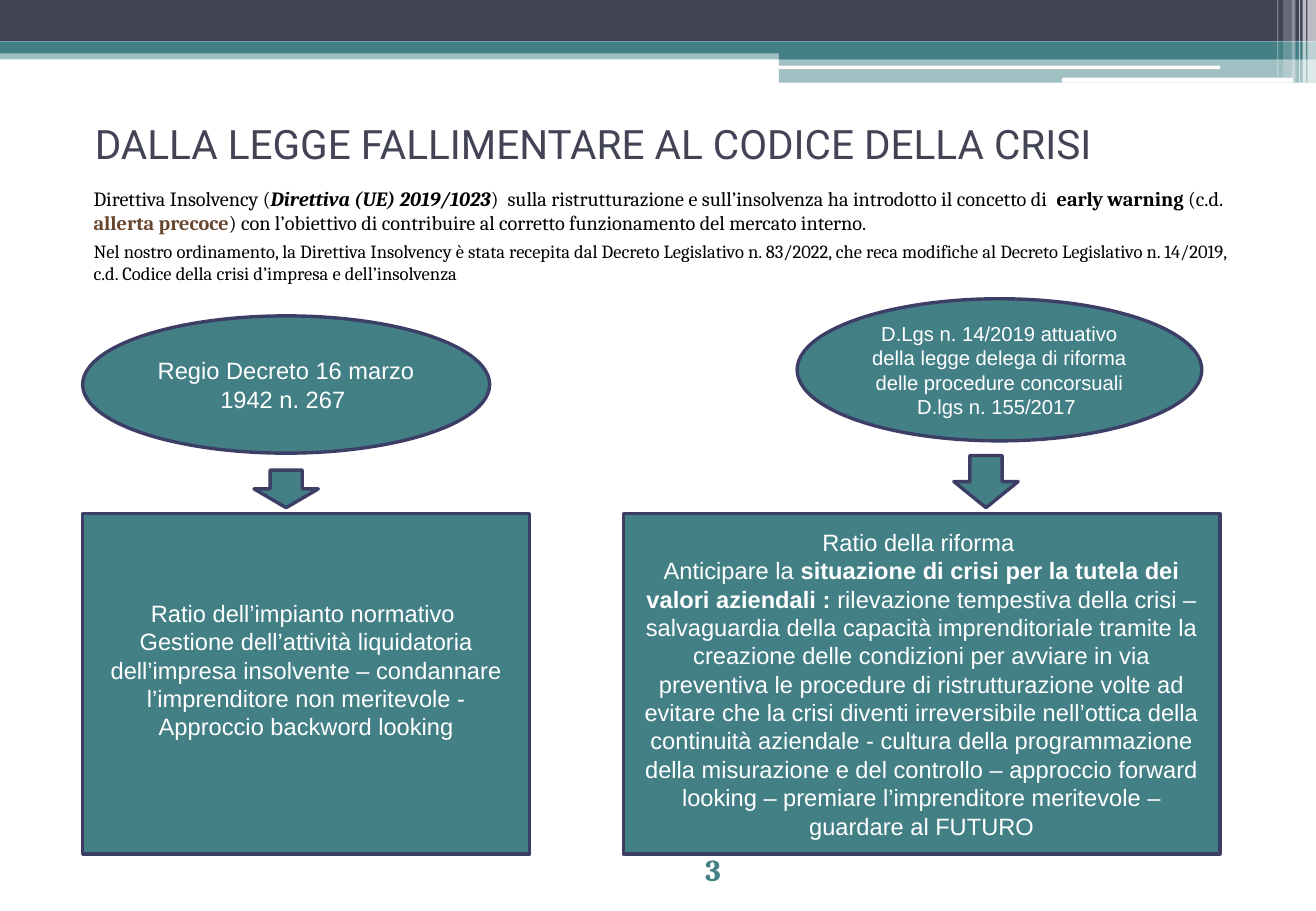
"""Build the slide on the move from bankruptcy law to the Italian crisis code."""
from lxml import etree
from pptx import Presentation
from pptx.dml.color import RGBColor
from pptx.enum.shapes import MSO_SHAPE
from pptx.enum.text import MSO_ANCHOR, MSO_AUTO_SIZE, PP_ALIGN
from pptx.oxml.ns import qn
from pptx.util import Inches, Pt

RECT, ROUND = MSO_SHAPE.RECTANGLE, MSO_SHAPE.ROUNDED_RECTANGLE
OVAL, ARROW = MSO_SHAPE.OVAL, MSO_SHAPE.DOWN_ARROW
LEFT, CENTER, RIGHT = PP_ALIGN.LEFT, PP_ALIGN.CENTER, PP_ALIGN.RIGHT
TOP, MIDDLE, BOTTOM = MSO_ANCHOR.TOP, MSO_ANCHOR.MIDDLE, MSO_ANCHOR.BOTTOM
NO_FIT = MSO_AUTO_SIZE.NONE

WIDTH, HEIGHT = Inches(10.83), Inches(7.5)
TEAL, NAVY, EDGE, WHITE, BLACK, BROWN = (
    "438086", "424456", "3D3E66", "FFFFFF", "000000", "68462E")

TITLE = "DALLA LEGGE FALLIMENTARE AL CODICE DELLA CRISI"
INTRO = [
    (12, [("Direttiva Insolvency (", ""),
          ("Direttiva (UE) 2019/1023", "bi"),
          (")  sulla ristrutturazione e sull’insolvenza ha introdotto il concetto di  ", ""),
          ("early warning ", "b"),
          ("(c.d. ", ""),
          ("allerta precoce", "b", BROWN),
          (") con l’obiettivo di contribuire al corretto funzionamento del mercato interno.", "")]),
    (11, [("Nel nostro ordinamento, la Direttiva Insolvency è stata recepita dal Decreto "
           "Legislativo n. 83/2022, che reca modifiche al Decreto Legislativo n. 14/2019, "
           "c.d. Codice della crisi d’impresa e dell’insolvenza", "")]),
]
OLD_LAW = [(14, [("Regio Decreto 16 marzo 1942 n. 267 ", "")])]
NEW_LAW = [(12, [("D.Lgs n. 14/2019 attuativo della legge delega di riforma delle procedure "
                  "concorsuali D.lgs n. 155/2017 ", "")])]
OLD_AIM = [
    (14, [("Ratio dell’impianto normativo ", "")]),
    (14, [("Gestione dell’attività liquidatoria dell’impresa insolvente – condannare "
           "l’imprenditore non meritevole - Approccio backword looking", "")]),
]
NEW_AIM = [
    (14, [("Ratio della riforma ", "")]),
    (14, [("Anticipare la ", ""),
          ("situazione di crisi per la tutela dei valori aziendali : ", "b"),
          ("rilevazione tempestiva della crisi – salvaguardia della capacità imprenditoriale "
           "tramite la creazione delle condizioni per avviare in via preventiva le procedure di "
           "ristrutturazione volte ad evitare che la crisi diventi irreversibile nell’ottica "
           "della continuità aziendale - cultura della programmazione della misurazione e del "
           "controllo – approccio forward looking – premiare l’imprenditore meritevole – "
           "guardare al FUTURO", "")]),
]
PAGE = [(18, [("3", "b")])]

# Places are left, top, width and height in percent of the slide.
BANDS = [
    (RECT, (0, 5.33, 100, 1.2), TEAL, 50),
    (RECT, (0, 0, 100, 4.53), NAVY, 100),
    (RECT, (0, 4.53, 100, 1.33), TEAL, 100),
    (RECT, (59.19, 5.2, 40.81, 1.33), TEAL, 100),
    (RECT, (59.19, 6.4, 40.81, 2.67), TEAL, 50),
    (ROUND, (59.19, 7.2, 33.52, 0.4), WHITE, 100),
    (ROUND, (80.7, 8.53, 17.54, 0.53), WHITE, 100),
]
STRIPES = [(99.35, 0.65, 9.07, 65), (98.98, 0.28, 9.07, 65), (98.71, 0.09, 9.07, 60),
           (98.15, 0.28, 9.07, 40), (97.51, 0.65, 8.53, 20), (97.05, 0.09, 8.53, 30)]
ARROW_WIDTH, ARROW_END = 4.89, 55.73
AIM_TOP, AIM_HEIGHT = 56.4, 37.33
COLUMNS = [
    (OLD_LAW, (6.28, 34.67, 30.93, 15.07), (19.3, 51.6), OLD_AIM, (6.28, 33.98), 0.28),
    (NEW_LAW, (60.57, 32.8, 30.75, 15.6), (72.48, 50), NEW_AIM, (47.37, 45.34), 0.05),
]


def color(value):
    return RGBColor.from_string(value)


def spot(place):
    return [round(share * side / 100) for share, side in zip(place, (WIDTH, HEIGHT) * 2)]


def draw(kind, place, fill, opacity=100, edge=None):
    shape = slide.shapes.add_shape(kind, *spot(place))
    shape.shadow.inherit = False
    shape.fill.solid()
    shape.fill.fore_color.rgb = color(fill)
    if opacity < 100:
        tint = shape.fill._xPr.find(".//" + qn("a:srgbClr"))
        etree.SubElement(tint, qn("a:alpha"), val=str(opacity * 1000))
    if edge:
        shape.line.color.rgb = color(edge)
        shape.line.width = Pt(2)
    else:
        shape.line.fill.background()
    return shape


def write(shape, content, font, ink, align, anchor, bottom=0.05):
    frame = shape.text_frame
    frame.word_wrap, frame.auto_size, frame.vertical_anchor = True, NO_FIT, anchor
    frame.margin_bottom = Inches(bottom)
    for index, (size, runs) in enumerate(content):
        paragraph = frame.add_paragraph() if index else frame.paragraphs[0]
        paragraph.alignment = align
        paragraph.font.name, paragraph.font.size = font, Pt(size)
        paragraph.font.color.rgb = color(ink)
        for text, style, *accent in runs:
            run = paragraph.add_run()
            run.text = text
            run.font.name, run.font.size = font, Pt(size)
            run.font.bold, run.font.italic = "b" in style, "i" in style
            run.font.color.rgb = color(accent[0] if accent else ink)


def place_on(shape, place):
    shape.left, shape.top, shape.width, shape.height = spot(place)
    return shape


deck = Presentation()
deck.slide_width, deck.slide_height = WIDTH, HEIGHT
slide = deck.slides.add_slide(deck.slide_layouts[1])

for kind, place, fill, opacity in BANDS:
    draw(kind, place, fill, opacity)
for left, width, height, opacity in STRIPES:
    draw(RECT, (left, 0, width, height), WHITE, opacity)

title = place_on(slide.shapes.title, (6.28, 10.8, 88.73, 9.87))
write(title, [(24, [(TITLE, "")])], "Roboto", NAVY, LEFT, MIDDLE)

intro = place_on(slide.placeholders[1], (5.08, 19.73, 89.94, 76.13))
write(intro, INTRO, "Cambria", BLACK, LEFT, TOP)
for paragraph in intro.text_frame.paragraphs:
    paragraph.space_before = Pt(3)
    properties = paragraph._p.get_or_add_pPr()
    properties.set("marL", str(Inches(0.12)))
    properties.set("indent", "0")
    bullet = etree.Element(qn("a:buNone"))
    properties.find(qn("a:defRPr")).addprevious(bullet)

page = slide.shapes.add_textbox(*spot((47.37, 92.8, 8.31, 5.33)))
write(page, PAGE, "Cambria", TEAL, RIGHT, BOTTOM)

for law, law_place, (arrow_left, arrow_top), aim, (aim_left, aim_width), bottom in COLUMNS:
    write(draw(OVAL, law_place, TEAL, edge=EDGE), law, "Arial", WHITE, CENTER, MIDDLE)
    draw(ARROW, (arrow_left, arrow_top, ARROW_WIDTH, ARROW_END - arrow_top), TEAL, edge=EDGE)
    aim_box = draw(RECT, (aim_left, AIM_TOP, aim_width, AIM_HEIGHT), TEAL, edge=EDGE)
    write(aim_box, aim, "Arial", WHITE, CENTER, MIDDLE, bottom)

deck.save("out.pptx")
